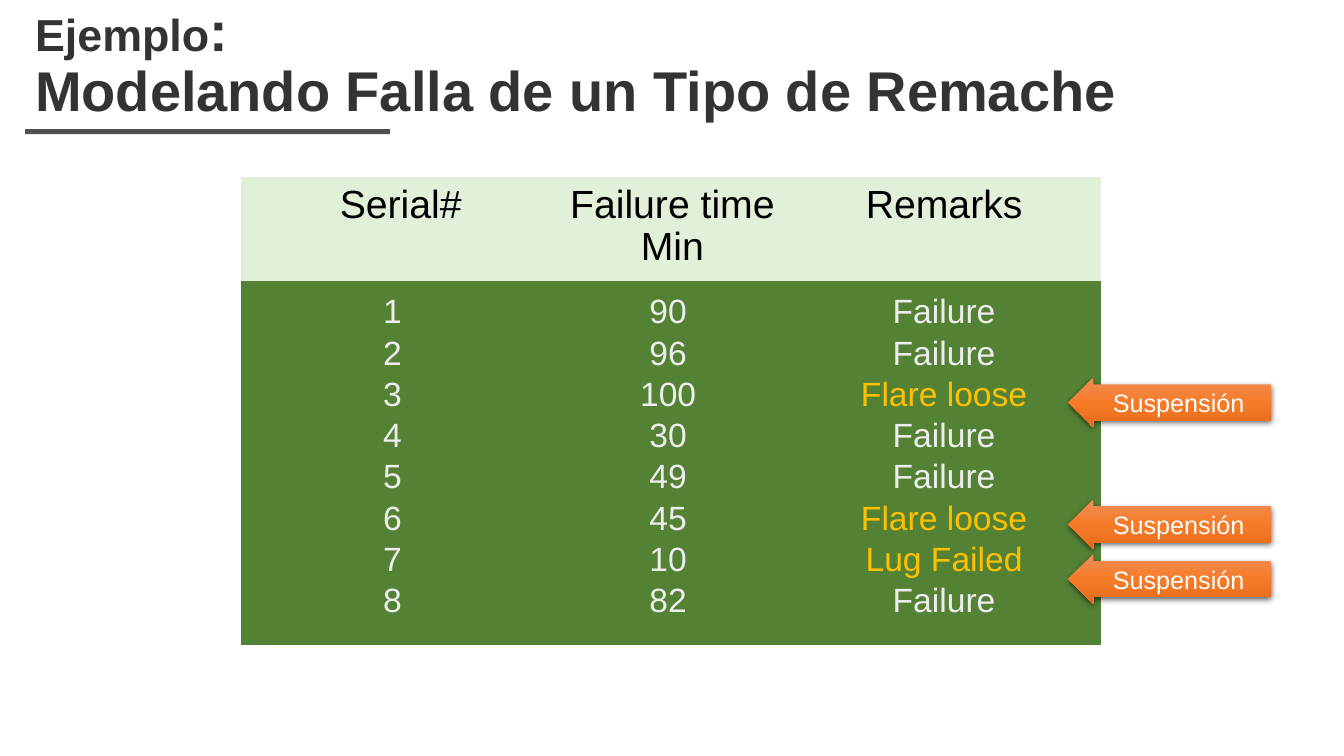
from copy import deepcopy

from lxml.etree import SubElement as Sub
from pptx import Presentation
from pptx.dml.color import RGBColor as RGB
from pptx.enum.shapes import MSO_SHAPE as Shape
from pptx.enum.text import MSO_ANCHOR as Anchor, PP_ALIGN as Align
from pptx.oxml.ns import qn
from pptx.util import Pt

INK = {
    "title": "333333", "rule": "515151", "pale": "E2F0D9", "green": "548235",
    "head": "000000", "body": "EDEDED", "gold": "FFC000", "white": "FFFFFF",
    "top": "F18C57", "mid": "F67B28", "low": "E56C19",
}
NO_STYLE = "{2D5ABB26-0587-4C30-8999-92F81FD0307C}"
HEADS = ["Serial#", "Failure time Min", "Remarks"]
TIMES = [90, 96, 100, 30, 49, 45, 10, 82]
NOTES = {3: "Flare loose", 6: "Flare loose", 7: "Lug Failed"}


def rgb(name):
    return RGB.from_string(INK[name])


def style(font, size, ink, bold=False):
    form = {"name": "Arial", "size": Pt(size), "bold": bold}
    for key, value in form.items():
        setattr(font, key, value)
    font.color.rgb = rgb(ink)


def inset(item, left=0, top=0, right=0, bottom=0):
    """Set the text margins of a cell or a text frame."""
    sides = {"left": left, "top": top, "right": right, "bottom": bottom}
    for side, value in sides.items():
        setattr(item, f"margin_{side}", Pt(value))


def add_title(slide, left, top, width, height):
    box = slide.shapes.add_textbox(Pt(left), Pt(top), Pt(width), Pt(height))
    frame = box.text_frame
    frame.word_wrap = True
    frame.vertical_anchor = Anchor.BOTTOM
    para = frame.paragraphs[0]
    para.line_spacing = 0.9
    parts = [("Ejemplo", 32), (":\vModelando Falla de un Tipo de Remache", 40)]
    for text, size in parts:
        lines = text.split("\v")
        for i, line in enumerate(lines):
            if i:
                para.add_line_break()
            run = para.add_run()
            run.text = line
            style(run.font, size, "title", True)

    rule = slide.shapes.add_shape(
        Shape.ROUNDED_RECTANGLE, Pt(left), Pt(top + height), Pt(260.6), Pt(3.6))
    rule.shadow.inherit = False
    rule.fill.solid()
    rule.fill.fore_color.rgb = rgb("rule")
    rule.line.fill.background()


def fill_cell(cell, text, size, ink, back):
    cell.fill.solid()
    cell.fill.fore_color.rgb = rgb(back)
    cell.text = text
    para = cell.text_frame.paragraphs[0]
    para.alignment = Align.CENTER
    style(para.font, size, ink)
    return para


def add_grid(slide, left, top, width):
    pitch, above, below = 29.5, 7.5, 17
    rows = [[str(n), str(time), NOTES.get(n, "Failure")]
            for n, time in enumerate(TIMES, 1)]
    last = len(rows)
    tall = [74] + [pitch] * last
    tall[1] += above
    tall[last] += below
    table = slide.shapes.add_table(
        last + 1, len(HEADS), Pt(left), Pt(top), Pt(width), Pt(sum(tall))).table
    table.first_row = table.horz_banding = False
    table._tbl.tblPr.find(qn("a:tableStyleId")).text = NO_STYLE
    wide = [206.5, 197]
    for col, size in zip(table.columns, wide + [width - sum(wide)]):
        col.width = Pt(size)
    for row, size in zip(table.rows, tall):
        row.height = Pt(size)

    for c, (text, pad) in enumerate(zip(HEADS, [(21.5, 0), (12, 6), (0, 13.5)])):
        cell = table.cell(0, c)
        fill_cell(cell, text, 28, "head", "pale").line_spacing = 0.95
        inset(cell, pad[0], 6, pad[1])
    for r, row in enumerate(rows, 1):
        for c, text in enumerate(row):
            cell = table.cell(r, c)
            ink = "gold" if c == 2 and r in NOTES else "body"
            fill_cell(cell, text, 24, ink, "green")
            cell.vertical_anchor = Anchor.MIDDLE
            inset(cell, 9.5 if c == 0 else 0, above if r == 1 else 0,
                  13.5 if c == 2 else 0, below if r == last else 0)


def add_flag(slide, left, top, width, height):
    """Add an arrow that marks a suspended row."""
    flag = slide.shapes.add_shape(
        Shape.LEFT_ARROW, Pt(left), Pt(top), Pt(width), Pt(height))
    flag.adjustments[0], flag.adjustments[1] = 0.72, 0.5
    flag.line.fill.background()
    flag.fill.gradient()
    flag.fill.gradient_angle = 270
    stops = flag._element.spPr.find(qn("a:gradFill")).find(qn("a:gsLst"))
    stops.insert(1, deepcopy(stops[0]))
    for stop, ink, spot in zip(flag.fill.gradient_stops,
                               ["top", "mid", "low"], [0, 0.5, 1]):
        stop.color.rgb = rgb(ink)
        stop.position = spot

    flag.shadow.inherit = False
    effects = flag._element.spPr.find(qn("a:effectLst"))
    shade = Sub(effects, qn("a:outerShdw"), blurRad=str(Pt(4.5)),
                dist=str(Pt(1.5)), dir="5400000", algn="ctr", rotWithShape="0")
    black = Sub(shade, qn("a:srgbClr"), val="000000")
    Sub(black, qn("a:alpha"), val="63000")

    frame = flag.text_frame
    frame.text = "Suspensión"
    frame.vertical_anchor = Anchor.MIDDLE
    para = frame.paragraphs[0]
    para.alignment = Align.CENTER
    style(para.font, 18, "white")


def main():
    deck = Presentation()
    deck.slide_width, deck.slide_height = Pt(960), Pt(540)
    slide = deck.slides.add_slide(deck.slide_layouts[6])
    add_title(slide, 18, 24.5, 879, 67.7)
    add_grid(slide, 172.3, 126.7, 614.2)
    for top in (270, 357, 396):
        add_flag(slide, 763.2, top, 144.7, 35.3)
    deck.save("out.pptx")


if __name__ == "__main__":
    main()
